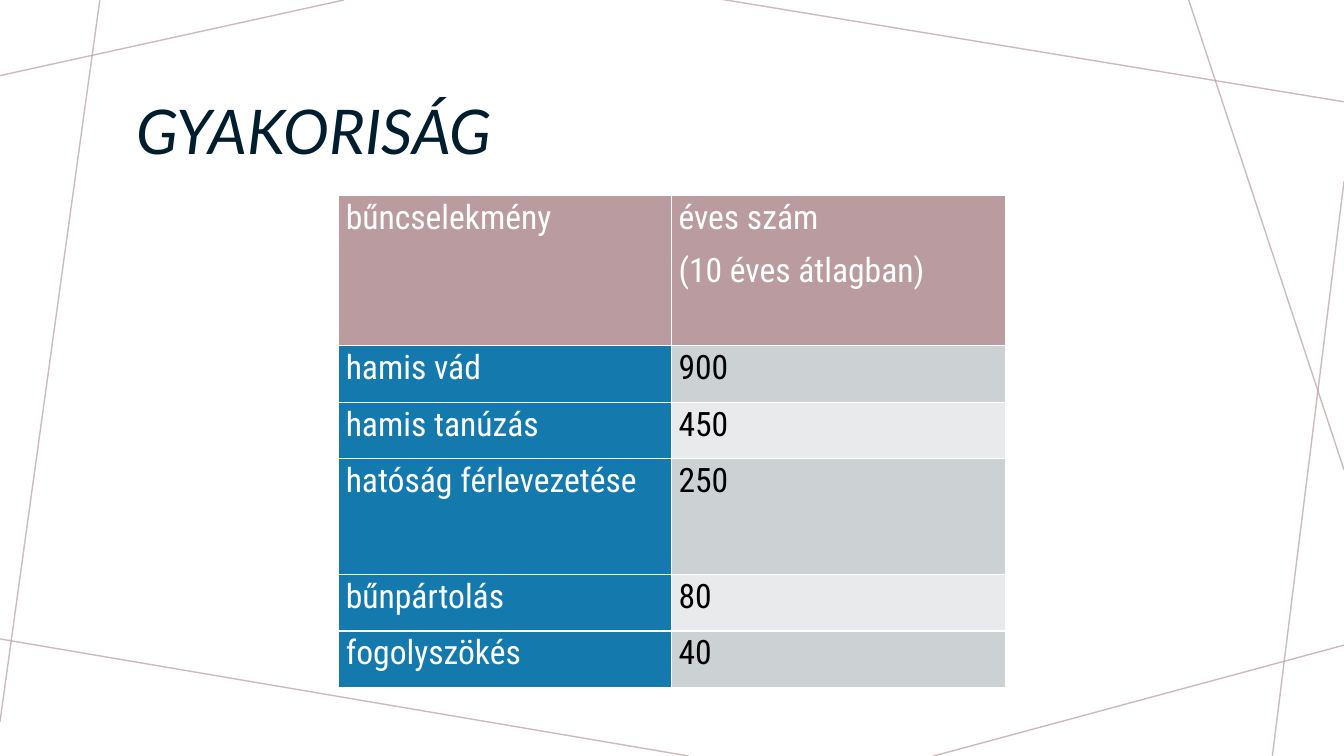
from lxml import etree
from pptx import Presentation, util as u
from pptx.dml.color import RGBColor
from pptx.enum import shapes, text
from pptx.oxml import ns

WIDTH, HEIGHT = 13.33, 7.5
INK, ROSE, BLUE = "001E2E", "BA9CA0", "147AAE"
WHITE, BLACK = "FFFFFF", "000000"
BANDS = ("CCD1D3", "E8EAEB")
COLUMNS = (3.3, 3.31)
ROW, TALL_ROW, HEADER_ROW = 0.56, 1.15, 1.49

BACKGROUND_LINES = (
    (3.41, 0, 0, 0.75),
    (0.99, 0, 0, 7.16),
    (6.83, HEIGHT, -0.05, 6.33),
    (WIDTH, 6.4, 9.26, HEIGHT),
    (WIDTH, 1.8, 12.62, HEIGHT),
    (WIDTH, 4.66, 11.79, 0),
    (WIDTH, 1.01, 7.14, -0.01),
)
HEADER = (("bűncselekmény",), ("éves szám", "(10 éves átlagban)"))
OFFENCES = (
    ("hamis vád", "900", ROW),
    ("hamis tanúzás", "450", ROW),
    ("hatóság férlevezetése", "250", TALL_ROW),
    ("bűnpártolás", "80", ROW),
    ("fogolyszökés", "40", ROW),
)


def color(value):
    return RGBColor.from_string(value)


def add_run(para, words, font, size, ink, italic=False):
    span = para.add_run()
    span.text = words
    span.font.name = font
    span.font.size = u.Pt(size)
    span.font.italic = italic
    span.font.color.rgb = color(ink)


def add_background_line(page, ends):
    line = page.shapes.add_connector(
        shapes.MSO_CONNECTOR.STRAIGHT, *(u.Inches(value) for value in ends))
    line.line.width = u.Pt(1)
    line.line.color.rgb = color(ROSE)
    properties = line._element.spPr
    shade = properties.find(".//" + ns.qn("a:srgbClr"))
    etree.SubElement(shade, ns.qn("a:alpha"), val="70000")
    etree.SubElement(properties, ns.qn("a:effectLst"))


def set_title(page, words):
    title = page.shapes.title
    title.left, title.top = u.Inches(1.25), u.Inches(0.58)
    title.width, title.height = u.Inches(10.83), u.Inches(1.51)
    title.text_frame.vertical_anchor = text.MSO_ANCHOR.MIDDLE
    para = title.text_frame.paragraphs[0]
    para.alignment = text.PP_ALIGN.LEFT
    para.line_spacing = 0.9
    add_run(para, words, "Lato", 44, INK, italic=True)


def add_borders(cell):
    """Draw thin white lines on all four sides; they must precede the fill."""
    properties = cell._tc.get_or_add_tcPr()
    for index, side in enumerate(("lnL", "lnR", "lnT", "lnB")):
        border = etree.Element(ns.qn("a:" + side), w=str(u.Pt(1)))
        fill = etree.SubElement(border, ns.qn("a:solidFill"))
        etree.SubElement(fill, ns.qn("a:srgbClr"), val=WHITE)
        properties.insert(index, border)


def fill_cell(cell, lines, fill, ink):
    cell.margin_left = cell.margin_right = u.Inches(0.07)
    cell.margin_top = cell.margin_bottom = 0
    cell.fill.solid()
    cell.fill.fore_color.rgb = color(fill)
    add_borders(cell)
    frame = cell.text_frame
    for index, words in enumerate(lines):
        para = frame.add_paragraph() if index else frame.paragraphs[0]
        para.line_spacing = 1.07
        para.space_after = u.Pt(8)
        add_run(para, words, "Roboto Condensed", 24, ink)


def add_offence_table(page):
    heights = [HEADER_ROW] + [height for _, _, height in OFFENCES]
    table = page.shapes.add_table(
        len(heights), len(COLUMNS), u.Inches(3.36), u.Inches(1.94),
        u.Inches(sum(COLUMNS)), u.Inches(sum(heights))).table
    for column, width in zip(table.columns, COLUMNS):
        column.width = u.Inches(width)
    for row, height in zip(table.rows, heights):
        row.height = u.Inches(height)
    for column, lines in enumerate(HEADER):
        fill_cell(table.cell(0, column), lines, ROSE, WHITE)
    for index, (offence, count, _) in enumerate(OFFENCES):
        fill_cell(table.cell(index + 1, 0), [offence], BLUE, WHITE)
        fill_cell(table.cell(index + 1, 1), [count], BANDS[index % 2], BLACK)


def main():
    deck = Presentation()
    deck.slide_width, deck.slide_height = u.Inches(WIDTH), u.Inches(HEIGHT)
    page = deck.slides.add_slide(deck.slide_layouts.get_by_name("Title Only"))
    for ends in BACKGROUND_LINES:
        add_background_line(page, ends)
    set_title(page, "GYAKORISÁG")
    add_offence_table(page)
    deck.save("out.pptx")


if __name__ == "__main__":
    main()
